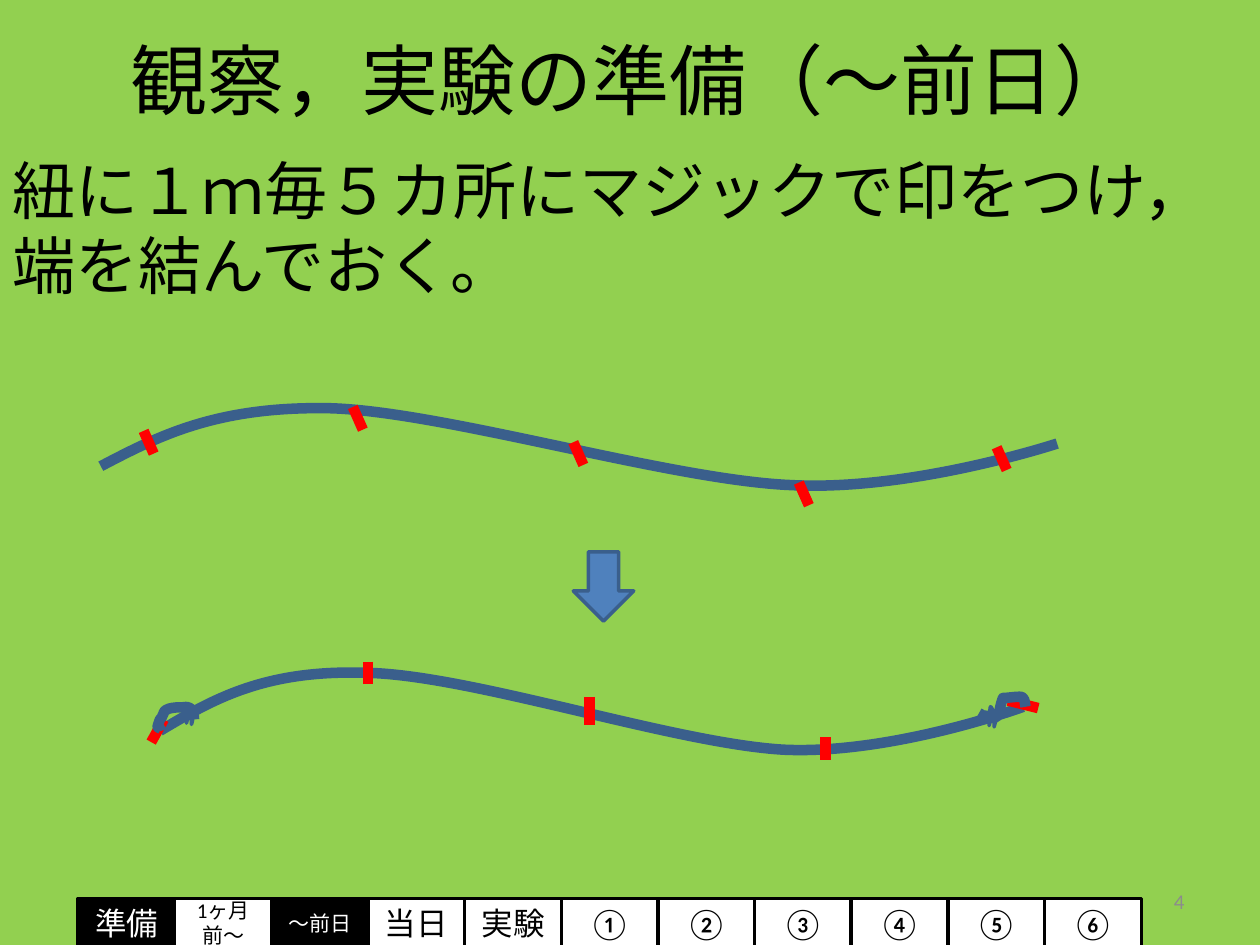
from lxml import etree
from pptx import Presentation
from pptx.dml.color import RGBColor
from pptx.enum import lang, shapes, text
from pptx.oxml.ns import qn
from pptx.util import Inches, Pt

GREEN = RGBColor(0x92, 0xD0, 0x50)
NAVY = RGBColor(0x3A, 0x5F, 0x8C)
BLUE = RGBColor(0x4F, 0x81, 0xBD)
RED = RGBColor(0xFF, 0, 0)
GRAY = RGBColor(0x8C, 0x8C, 0x8C)
BLACK = RGBColor(0, 0, 0)
WHITE = RGBColor(0xFF, 0xFF, 0xFF)


def write(shape, words, size, color, align, anchor=text.MSO_ANCHOR.MIDDLE):
    frame = shape.text_frame
    frame.word_wrap = True
    frame.auto_size = text.MSO_AUTO_SIZE.NONE
    frame.vertical_anchor = anchor
    para = frame.paragraphs[0]
    para.alignment = align
    for i, line in enumerate(words.split("\n")):
        if i:
            para.add_line_break()
        run = para.add_run()
        run.text = line
        run.font.size = Pt(size)
        run.font.name = "Calibri"
        run.font.color.rgb = color
        run.font.language_id = lang.MSO_LANGUAGE_ID.JAPANESE
    return para


def curve(knots, width, fill=None):
    """Draw Bezier sections: a start point, then three points per section."""
    dots = [(Inches(x), Inches(y)) for x, y in knots]
    ends = dots[::3]
    pen = slide.shapes.build_freeform(*ends[0])
    pen.add_line_segments(ends[1:], close=fill is not None)
    shape = pen.convert_to_shape()
    left, top = min(x for x, y in ends), min(y for x, y in ends)
    for n, leg in enumerate(list(shape._element.iter(qn("a:lnTo")))):
        leg.tag = qn("a:cubicBezTo")
        leg.clear()
        for x, y in dots[3 * n + 1:3 * n + 4]:
            etree.SubElement(leg, qn("a:pt"), x=str(x - left), y=str(y - top))
    shape.shadow.inherit = False
    shape.line.color.rgb = NAVY
    shape.line.width = Pt(width)
    if fill is None:
        shape.fill.background()
    else:
        shape.fill.solid()
        shape.fill.fore_color.rgb = fill


deck = Presentation()
deck.slide_width, deck.slide_height = Inches(10), Inches(7.5)
slide = deck.slides.add_slide(deck.slide_layouts[5])
slide.background.fill.solid()
slide.background.fill.fore_color.rgb = GREEN

# Title, page number and instruction
title = slide.shapes.title
title.left, title.top = Inches(0.51), Inches(0)
title.width, title.height = Inches(9), Inches(1.25)
write(title, "観察，実験の準備（～前日）", 44, BLACK, text.PP_ALIGN.CENTER)

page = slide.shapes.add_textbox(Inches(7.17), Inches(6.95), Inches(2.33), Inches(0.4))
para = write(page, "4", 12, GRAY, text.PP_ALIGN.RIGHT)
para.runs[0].font.language_id = lang.MSO_LANGUAGE_ID.ENGLISH_US

body = slide.shapes.add_textbox(Inches(0), Inches(1.15), Inches(10), Inches(5.55))
para = write(body, "紐に１ｍ毎５カ所にマジックで印をつけ，端を結んでおく。", 36, BLACK,
             text.PP_ALIGN.LEFT, text.MSO_ANCHOR.TOP)
para.space_before = Pt(7.2)

# String before and after tying
curve([(0.8, 3.7), (1.26, 3.46), (1.72, 3.22), (2.63, 3.24), (3.54, 3.27),
       (5.32, 3.81), (6.28, 3.85), (7.24, 3.9), (8.39, 3.52), (8.39, 3.52)], 6)
curve([(1.27, 5.8), (1.69, 5.55), (2.1, 5.31), (2.92, 5.34), (3.75, 5.36),
       (5.35, 5.9), (6.22, 5.95), (7.08, 5.99), (8.12, 5.61), (8.12, 5.61)], 6)

# Red marks: slanted on the loose string, then as tied
marks = [(x, y, x + 0.08, y + 0.18) for x, y in
         [(1.14, 3.42), (2.8, 3.23), (4.55, 3.51), (6.34, 3.83), (7.91, 3.55)]]
marks += [(1.3, 5.71, 1.2, 5.89), (2.92, 5.25, 2.92, 5.43), (4.68, 5.53, 4.68, 5.75),
          (6.55, 5.85, 6.55, 6.03), (8, 5.56, 8.24, 5.62)]
for mark in marks:
    line = slide.shapes.add_connector(shapes.MSO_CONNECTOR.STRAIGHT,
                                      *[Inches(v) for v in mark])
    line.line.color.rgb = RED
    line.line.width = Pt(6)
    etree.SubElement(line._element.spPr, qn("a:effectLst"))

arrow = slide.shapes.add_shape(shapes.MSO_SHAPE.DOWN_ARROW, Inches(4.55), Inches(4.38),
                               Inches(0.48), Inches(0.55))
arrow.shadow.inherit = False
arrow.fill.solid()
arrow.fill.fore_color.rgb = BLUE
arrow.line.color.rgb = NAVY
arrow.line.width = Pt(2)

# Loops and knots at both ends
curve([(1.54, 5.71), (1.54, 5.68), (1.54, 5.65), (1.51, 5.62), (1.5, 5.62),
       (1.49, 5.62), (1.48, 5.61), (1.46, 5.62), (1.34, 5.6), (1.3, 5.65),
       (1.3, 5.65), (1.3, 5.67), (1.29, 5.68), (1.29, 5.69), (1.28, 5.7),
       (1.27, 5.71), (1.26, 5.73), (1.25, 5.77), (1.25, 5.77), (1.28, 5.79),
       (1.28, 5.78), (1.28, 5.8)], 6)
knot = [(1.53, 5.62), (1.53, 5.61), (1.51, 5.66), (1.5, 5.68), (1.49, 5.7),
        (1.48, 5.74), (1.48, 5.74), (1.48, 5.69), (1.48, 5.64), (1.49, 5.59),
        (1.49, 5.58), (1.51, 5.61), (1.51, 5.62), (1.52, 5.67), (1.52, 5.71),
        (1.52, 5.75), (1.54, 5.69), (1.53, 5.64), (1.53, 5.62)]
for dx, dy in [(0, 0), (6.37, 0.02)]:
    curve([(x + dx, y + dy) for x, y in knot], 2, BLUE)
curve([(8.14, 5.61), (8.13, 5.59), (8.14, 5.56), (8.12, 5.54), (8.12, 5.53),
       (8.1, 5.53), (8.09, 5.53), (8.05, 5.53), (8, 5.54), (7.96, 5.54),
       (7.94, 5.6), (7.95, 5.57), (7.93, 5.65), (7.92, 5.66), (7.93, 5.67),
       (7.92, 5.68), (7.91, 5.69), (7.9, 5.69), (7.89, 5.7), (7.88, 5.69),
       (7.86, 5.69), (7.85, 5.69), (7.84, 5.68), (7.82, 5.68), (7.8, 5.68),
       (7.79, 5.67), (7.77, 5.66), (7.77, 5.66)], 6)

# Progress bar, with the current stage in black
tabs = ["準備", "1ヶ月\n前～", "～前日", "当日", "実験", *"①②③④⑤⑥"]
pitch = (8.29 - 0.62) / (len(tabs) - 1)
for i, name in enumerate(tabs):
    dark = name in ("準備", "～前日")
    tab = slide.shapes.add_shape(shapes.MSO_SHAPE.RECTANGLE, Inches(0.62 + i * pitch),
                                 Inches(7.13), Inches(0.77), Inches(0.39))
    tab.shadow.inherit = False
    tab.fill.solid()
    tab.fill.fore_color.rgb = BLACK if dark else WHITE
    tab.line.color.rgb = BLACK
    tab.line.width = Pt(2)
    write(tab, name, 12 if "前" in name else 18, WHITE if dark else BLACK,
          text.PP_ALIGN.CENTER)

deck.save("out.pptx")
